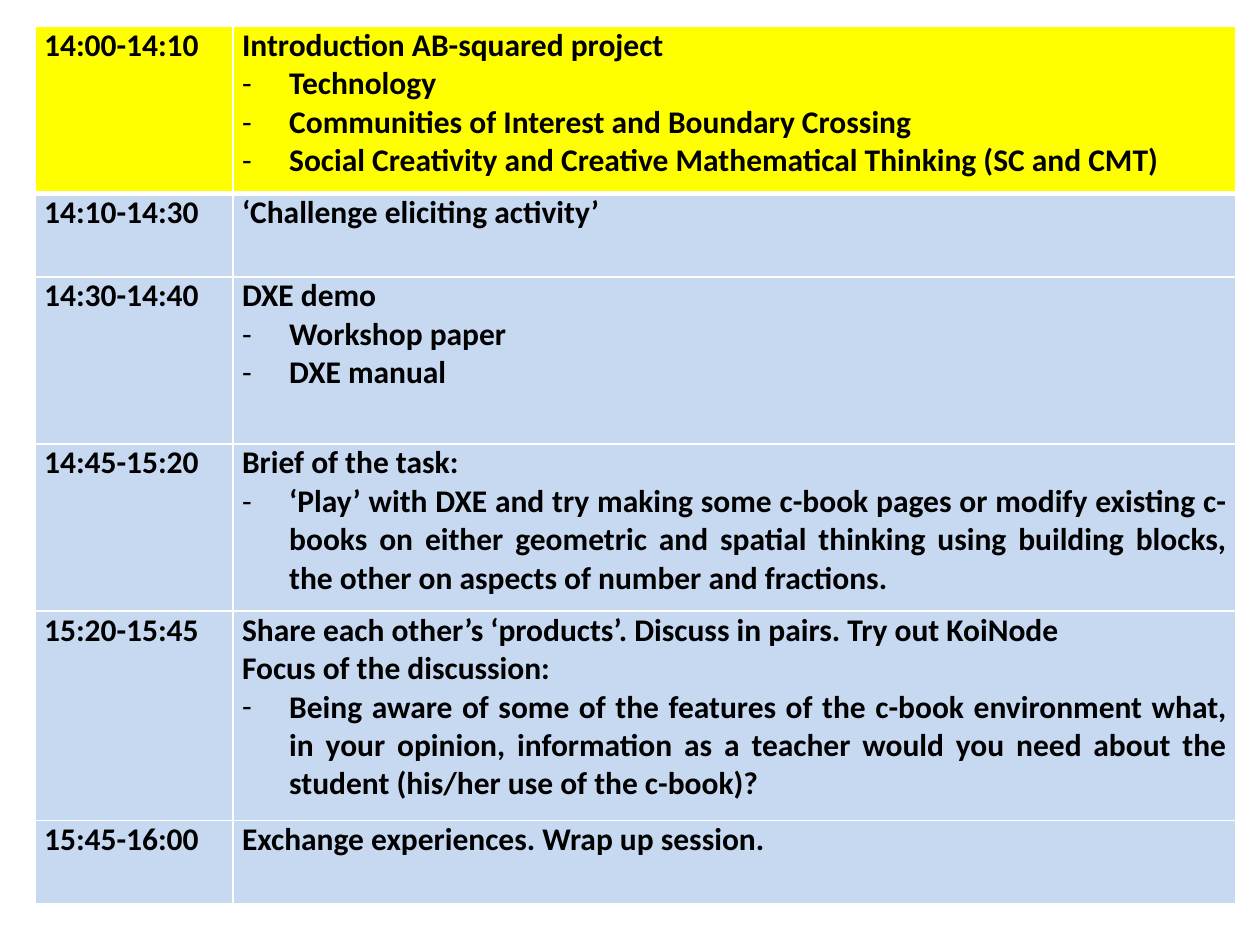
"""Build a one-slide workshop timetable as a two-column table."""
from lxml import etree
from pptx import Presentation, util as u
from pptx.dml.color import RGBColor
from pptx.enum import text
from pptx.oxml import ns

BLACK = RGBColor(0, 0, 0)
WHITE = RGBColor(255, 255, 255)
GOLD = RGBColor(255, 255, 0)
BLUE = RGBColor(0xC6, 0xD9, 0xF1)

LEFT, TOP = u.Cm(0.71), u.Cm(0.53)
COLS = [u.Cm(3.99), u.Cm(20.22)]
PAD = u.Cm(0.18)
INDENT = u.Cm(0.95)

# Each row: time, height in cm, fill, headings, dashed points
ROWS = [
    ("14:00-14:10", 3.37, GOLD, ["Introduction AB-squared project"],
     ["Technology",
      "Communities of Interest and Boundary Crossing",
      "Social Creativity and Creative Mathematical Thinking (SC and CMT)"]),
    ("14:10-14:30", 1.68, BLUE, ["‘Challenge eliciting activity’"], []),
    ("14:30-14:40", 3.37, BLUE, ["DXE demo"], ["Workshop paper", "DXE manual"]),
    ("14:45-15:20", 3.37, BLUE, ["Brief of the task:"],
     ["‘Play’ with DXE and try making some c-book pages or modify existing "
      "c-books on either geometric and spatial thinking using building blocks, "
      "the other on aspects of number and fractions."]),
    ("15:20-15:45", 4.22, BLUE,
     ["Share each other’s ‘products’. Discuss in pairs. Try out KoiNode",
      "Focus of the discussion:"],
     ["Being aware of some of the features of the c-book environment what, "
      "in your opinion, information as a teacher would you need about the "
      "student (his/her use of the c-book)?"]),
    ("15:45-16:00", 1.68, BLUE, ["Exchange experiences. Wrap up session."], []),
]


def add_dash(para):
    props = para._p.get_or_add_pPr()
    props.set("marL", str(INDENT))
    props.set("indent", str(-INDENT))
    etree.SubElement(props, ns.qn("a:buFont")).set("typeface", "Calibri")
    etree.SubElement(props, ns.qn("a:buChar")).set("char", "-")


def add_edges(cell, widths):
    props = cell._tc.get_or_add_tcPr()
    for spot, (side, width) in enumerate(widths.items()):
        line = etree.Element(ns.qn(f"a:ln{side}"), w=str(u.Pt(width)))
        fill = etree.SubElement(line, ns.qn("a:solidFill"))
        etree.SubElement(fill, ns.qn("a:srgbClr")).set("val", str(WHITE))
        props.insert(spot, line)


def fill_cell(cell, heads, points, color, widths):
    cell.margin_left = cell.margin_right = PAD
    cell.margin_top = cell.margin_bottom = 0
    cell.fill.solid()
    cell.fill.fore_color.rgb = color
    add_edges(cell, widths)
    frame = cell.text_frame
    frame.text = "\n".join(heads + points)
    for spot, para in enumerate(frame.paragraphs):
        para.alignment = text.PP_ALIGN.JUSTIFY
        font = para.font
        font.name, font.size, font.bold = "Calibri", u.Pt(18), True
        font.color.rgb = BLACK
        for run in para.runs:
            run.font.bold = True
            run.font.size = u.Pt(18)
        if spot >= len(heads):
            add_dash(para)


def main():
    deck = Presentation()
    deck.slide_width, deck.slide_height = u.Cm(25.4), u.Cm(19.05)
    slide = deck.slides.add_slide(deck.slide_layouts[6])
    tall = sum(u.Cm(row[1]) for row in ROWS)
    table = slide.shapes.add_table(
        len(ROWS), len(COLS), LEFT, TOP, sum(COLS), tall).table
    for col, width in zip(table.columns, COLS):
        col.width = width
    for spot, (time, height, color, heads, points) in enumerate(ROWS):
        table.rows[spot].height = u.Cm(height)
        widths = {"L": 1, "R": 1, "T": 3 if spot == 1 else 1,
                  "B": 3 if spot == 0 else 1}
        fill_cell(table.cell(spot, 0), [time], [], color, widths)
        fill_cell(table.cell(spot, 1), heads, points, color, widths)
    deck.save("out.pptx")


if __name__ == "__main__":
    main()
